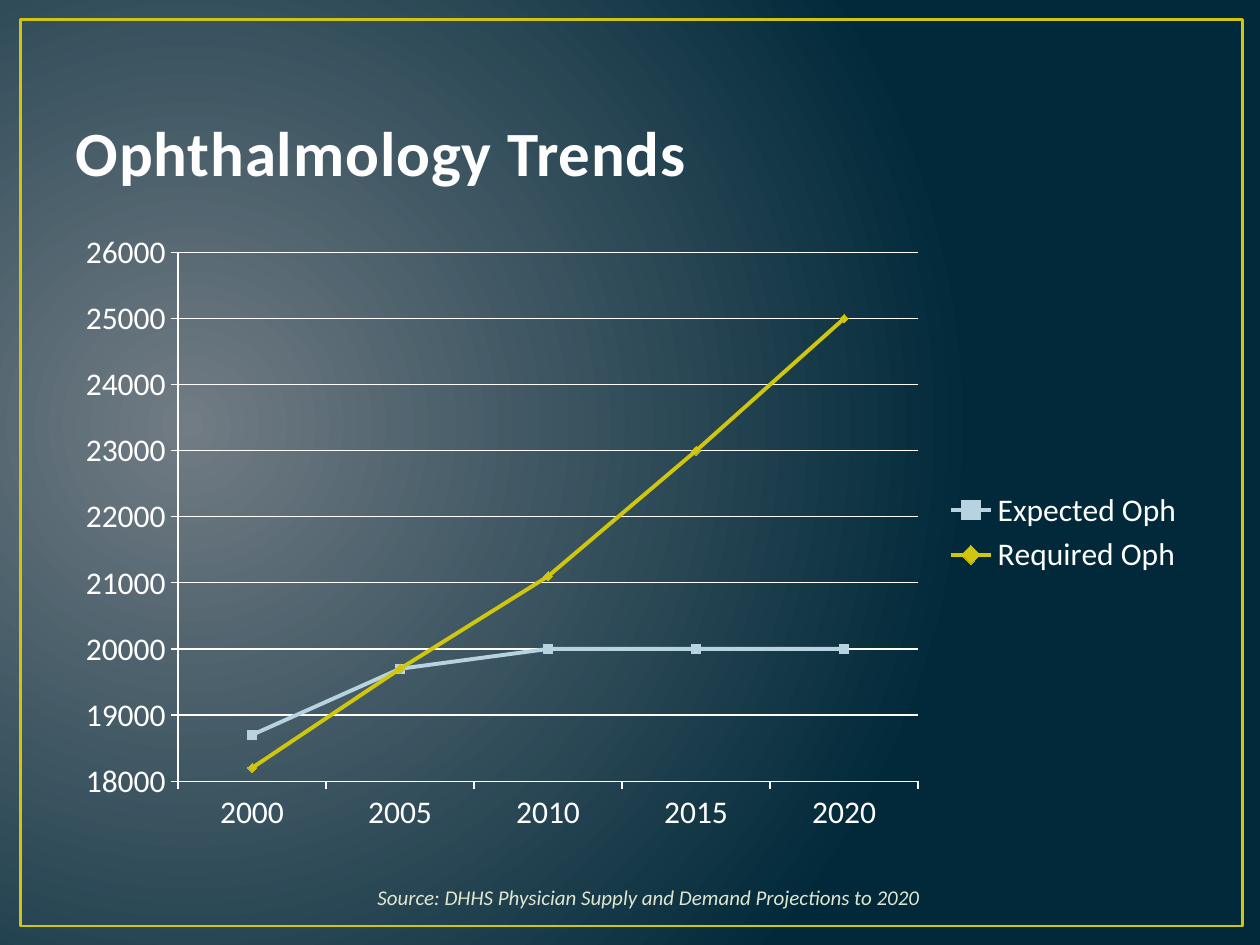
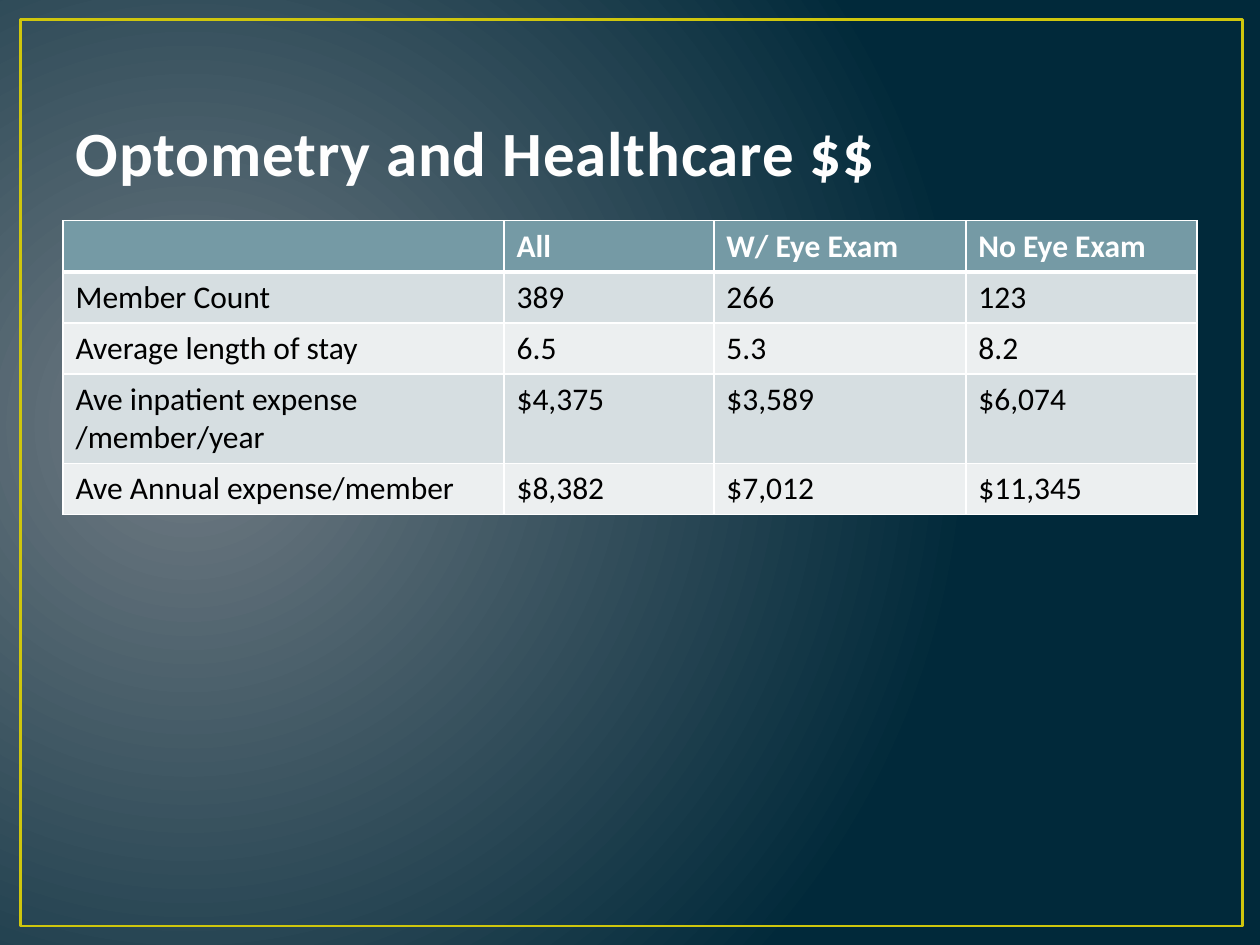
from lxml.etree import SubElement
from pptx import Presentation
from pptx.chart.data import CategoryChartData
from pptx.dml.color import RGBColor
from pptx.enum.chart import (
    XL_CHART_TYPE as ChartType,
    XL_LEGEND_POSITION as LegendPosition,
    XL_MARKER_STYLE as MarkerStyle,
    XL_TICK_MARK as TickMark,
)
from pptx.enum.shapes import MSO_SHAPE as Preset
from pptx.enum.text import MSO_ANCHOR as Anchor, PP_ALIGN as Align
from pptx.oxml import parse_xml
from pptx.oxml.ns import nsdecls, qn
from pptx.util import Cm, Pt

FONT = "Calibri"
COLORS = {
    "glow": "717C84",
    "night": "01293A",
    "frame": "CFC60D",
    "title": "FEFEFE",
    "outline": "384F55",
    "source": "DFE6D0",
    "white": "FFFFFF",
    "black": "000000",
    "expected": "B7D3DF",
    "required": "CFC60D",
    "header": "759AA5",
    "band_dark": "D6DEE1",
    "band_light": "ECEFF0",
}
FRAME_BOX = (0.41, 0.39, 24.64, 18.28)
TITLE_BOX = (1.27, 0.76, 22.86, 3.18)
CHART_BOX = (1.27, 4.45, 22.86, 12.57)
PLOT_BOX = (2.32, 0.64, 14.92, 10.66)
SOURCE_BOX = (6.56, 17.54, 13.13, 1.09)
TABLE_BOX = (1.27, 4.45, 22.86, 5.15)
COLUMN_WIDTHS = (8.89, 4.23, 5.08, 4.66)

YEARS = ("2000", "2005", "2010", "2015", "2020")
TRENDS = (
    ("Expected Oph", "expected", MarkerStyle.SQUARE, (18700, 19700, 20000, 20000, 20000)),
    ("Required Oph", "required", MarkerStyle.DIAMOND, (18200, 19700, 21100, 23000, 25000)),
)
COSTS = (
    ("", "All", "W/ Eye Exam", "No Eye Exam"),
    ("Member Count", "389", "266", "123"),
    ("Average length of stay", "6.5", "5.3", "8.2"),
    ("Ave inpatient expense /member/year", "$4,375", "$3,589", "$6,074"),
    ("Ave Annual expense/member", "$8,382", "$7,012", "$11,345"),
)


def color(name):
    """Return the named colour."""
    return RGBColor.from_string(COLORS[name])


def place(box):
    """Turn a box in centimetres into lengths."""
    return [Cm(value) for value in box]


def style_font(font, size, name, bold=False, italic=False):
    """Set the face, size, colour and weight of a font."""
    font.name, font.size = FONT, Pt(size)
    font.bold, font.italic = bold, italic
    font.color.rgb = color(name)


def style_line(line, name, width):
    """Set the colour and width of a line."""
    line.color.rgb = color(name)
    line.width = Pt(width)


def line_xml(tag, name, width):
    """Build a solid line element for text outlines and cell borders."""
    return parse_xml(
        f'<a:{tag} {nsdecls("a")} w="{Pt(width)}"><a:solidFill>'
        f'<a:srgbClr val="{COLORS[name]}"/></a:solidFill></a:{tag}>'
    )


def paint_background(master):
    """Give the master a circular glow on a dark ground."""
    fill = master.background.fill
    fill.gradient()
    for stop, name, position in zip(fill.gradient_stops, ("glow", "night"), (0, 1)):
        stop.color.rgb = color(name)
        stop.position = position
    gradient = master.element.find(".//" + qn("p:bgPr")).find(qn("a:gradFill"))
    gradient.remove(gradient.find(qn("a:lin")))
    circle = SubElement(gradient, qn("a:path"), {"path": "circle"})
    SubElement(circle, qn("a:fillToRect"), l="15000", t="50000", r="85000", b="60000")


def add_page(deck, title):
    """Add a framed slide with its title."""
    page = deck.slides.add_slide(deck.slide_layouts[5])
    frame = page.shapes.add_shape(Preset.RECTANGLE, *place(FRAME_BOX))
    frame.shadow.inherit = False
    frame.fill.background()
    style_line(frame.line, "frame", 1.5)

    heading = page.shapes.title
    heading.left, heading.top, heading.width, heading.height = place(TITLE_BOX)
    heading.text_frame.text = title
    heading.text_frame.vertical_anchor = Anchor.BOTTOM
    para = heading.text_frame.paragraphs[0]
    para.alignment = Align.LEFT
    style_font(para.font, 36, "title", bold=True)
    properties = heading.element.find(".//" + qn("a:defRPr"))
    properties.set("spc", "50")
    properties.insert(0, line_xml("ln", "outline", 1.05))
    return page


def fix_plot_area(chart, chart_box, plot_box):
    """Set the inner plot area from a box relative to the chart."""
    plot_area = chart.element.find(".//" + qn("c:plotArea"))
    for old in plot_area.findall(qn("c:layout")):
        plot_area.remove(old)
    layout = parse_xml(f'<c:layout {nsdecls("c")}/>')
    manual = SubElement(layout, qn("c:manualLayout"))
    settings = {"layoutTarget": "inner", "xMode": "edge", "yMode": "edge"}
    for tag, length, whole in zip("xywh", plot_box, chart_box[2:] * 2):
        settings[tag] = length / whole
    for tag, value in settings.items():
        SubElement(manual, qn(f"c:{tag}"), val=str(value))
    plot_area.insert(0, layout)


def add_trend_chart(page, box):
    """Draw expected against required numbers over the years."""
    data = CategoryChartData()
    data.categories = YEARS
    for name, _, _, values in TRENDS:
        data.add_series(name, values)
    chart = page.shapes.add_chart(ChartType.LINE_MARKERS, *place(box), data).chart
    style_font(chart.font, 18, "white")
    chart.has_title = False
    chart.has_legend = True
    chart.legend.position = LegendPosition.RIGHT
    chart.legend.include_in_layout = False
    fix_plot_area(chart, box, PLOT_BOX)

    for axis in (chart.category_axis, chart.value_axis):
        axis.major_tick_mark = TickMark.OUTSIDE
        axis.minor_tick_mark = TickMark.NONE
        style_line(axis.format.line, "white", 0.75)
    scale = chart.value_axis
    scale.minimum_scale, scale.maximum_scale, scale.major_unit = 18000, 26000, 1000
    scale.has_major_gridlines = True
    style_line(scale.major_gridlines.format.line, "white", 0.75)

    plot = chart.plots[0]
    plot.vary_by_categories = False
    for series, (_, name, symbol, _) in zip(plot.series, TRENDS):
        series.smooth = False
        style_line(series.format.line, name, 2.25)
        marker = series.marker
        marker.style, marker.size = symbol, 5
        marker.format.fill.solid()
        marker.format.fill.fore_color.rgb = color(name)
        style_line(marker.format.line, name, 0.75)


def add_source(page, box, text):
    """Write the source of the figures below the chart."""
    frame = page.shapes.add_textbox(*place(box)).text_frame
    frame.word_wrap = True
    frame.vertical_anchor = Anchor.MIDDLE
    frame.text = text
    para = frame.paragraphs[0]
    para.alignment = Align.CENTER
    style_font(para.font, 12, "source", italic=True)


def style_cell(cell, row):
    """Fill, border and set the font of a cell by its row."""
    is_header = row == 0
    fill_name = "header" if is_header else ("band_light", "band_dark")[row % 2]
    cell.fill.solid()
    cell.fill.fore_color.rgb = color(fill_name)
    style_font(cell.text_frame.paragraphs[0].font, 18,
               "white" if is_header else "black", bold=is_header)
    widths = {"lnL": 1, "lnR": 1, "lnT": 3 if row == 1 else 1, "lnB": 3 if is_header else 1}
    properties = cell._tc.get_or_add_tcPr()
    for index, (tag, width) in enumerate(widths.items()):
        properties.insert(index, line_xml(tag, "white", width))


def add_cost_table(page, box):
    """Tabulate stays and expenses with and without eye exams."""
    table = page.shapes.add_table(len(COSTS), len(COLUMN_WIDTHS), *place(box)).table
    for column, width in zip(table.columns, COLUMN_WIDTHS):
        column.width = Cm(width)
    for row, values in enumerate(COSTS):
        for column, value in enumerate(values):
            cell = table.cell(row, column)
            cell.text = value
            style_cell(cell, row)


def main():
    """Build and save the deck."""
    deck = Presentation()
    deck.slide_width, deck.slide_height = Cm(25.4), Cm(19.05)
    paint_background(deck.slide_master)

    trends = add_page(deck, "Ophthalmology Trends")
    add_trend_chart(trends, CHART_BOX)
    add_source(trends, SOURCE_BOX,
               "Source: DHHS Physician Supply and Demand Projections to 2020 ")

    costs = add_page(deck, "Optometry and Healthcare $$")
    add_cost_table(costs, TABLE_BOX)
    deck.save("out.pptx")


if __name__ == "__main__":
    main()
